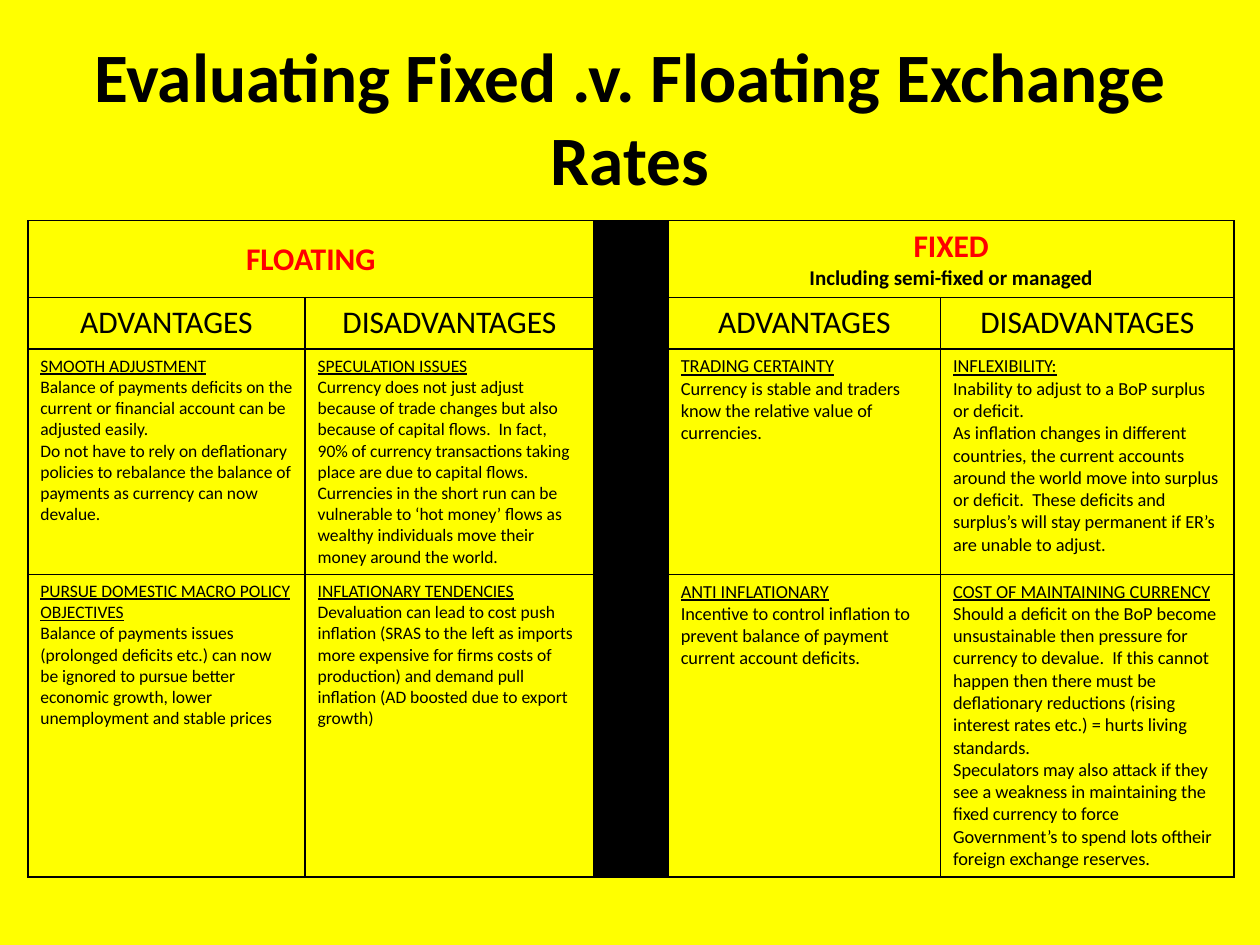
"""Build a slide comparing floating and fixed exchange rates."""
from lxml import etree
from pptx import Presentation
from pptx import util as u
from pptx.dml.color import RGBColor
from pptx.enum import text
from pptx.oxml import ns

TITLE = "Evaluating Fixed .v. Floating Exchange Rates"
YELLOW, BLACK, RED = "FFFF00", "000000", "FF0000"
COLUMNS = [5.59, 5.82, 1.5, 5.49, 5.92]
ROWS = [1.55, 1.04, 4.54, 6.1]
DIVIDER = 2
BODY_SIZES = {0: 10, 1: 10, 3: 10.5, 4: 10.5}
REGIMES = {0: ["FLOATING"], 3: ["FIXED", "Including semi-fixed or managed"]}
SIDES = {0: "ADVANTAGES", 1: "DISADVANTAGES", 3: "ADVANTAGES", 4: "DISADVANTAGES"}
ARGUMENTS = [
    {
        0: ["SMOOTH ADJUSTMENT",
            "Balance of payments deficits on the current or financial account can be "
            "adjusted easily.",
            "Do not have to rely on deflationary policies to rebalance the balance of "
            "payments as currency can now devalue."],
        1: ["SPECULATION ISSUES",
            "Currency does not just adjust because of trade changes but also because of "
            "capital flows.  In fact,  90% of currency transactions taking place are due "
            "to capital flows.  Currencies in the short run can be vulnerable to ‘hot "
            "money’ flows as wealthy individuals move their money around the world."],
        3: ["TRADING CERTAINTY",
            "Currency is stable and traders know the relative value of currencies."],
        4: ["INFLEXIBILITY:",
            "Inability to adjust to a BoP surplus or deficit.",
            "As inflation changes in different countries, the current accounts around the "
            "world move into surplus or deficit.  These deficits and surplus’s will stay "
            "permanent if ER’s are unable to adjust."],
    },
    {
        0: ["PURSUE DOMESTIC MACRO POLICY OBJECTIVES",
            "Balance of payments issues (prolonged deficits etc.) can now be ignored to "
            "pursue better economic growth, lower unemployment and stable prices"],
        1: ["INFLATIONARY TENDENCIES",
            "Devaluation can lead to cost push inflation (SRAS to the left as imports more "
            "expensive for firms costs of production) and demand pull inflation (AD "
            "boosted due to export growth)"],
        3: ["ANTI INFLATIONARY",
            "Incentive to control inflation to prevent balance of payment current account "
            "deficits."],
        4: ["COST OF MAINTAINING CURRENCY",
            "Should a deficit on the BoP become unsustainable then pressure for currency "
            "to devalue.  If this cannot happen then there must be deflationary reductions "
            "(rising interest rates etc.) = hurts living standards.",
            "Speculators may also attack if they see a weakness in maintaining the fixed "
            "currency to force Government’s to spend lots oftheir foreign exchange "
            "reserves."],
    },
]
TITLE_FORMAT = {"size": 39.6, "bold": True}
REGIME_FORMATS = [{"size": 18, "bold": True, "color": RED}, {"size": 12, "bold": True}]
SIDE_FORMAT = {"size": 18, "bold": False}


def rgb(value):
    return RGBColor.from_string(value)


def write(frame, lines, formats, align=text.PP_ALIGN.LEFT):
    for index, (line, values) in enumerate(zip(lines, formats)):
        paragraph = frame.paragraphs[0] if index == 0 else frame.add_paragraph()
        paragraph.alignment = align
        run = paragraph.add_run()
        run.text = line
        font = {"name": "Calibri", **values, "size": u.Pt(values["size"])}
        run.font.color.rgb = rgb(font.pop("color", BLACK))
        for name, value in font.items():
            setattr(run.font, name, value)


def add_borders(cell):
    properties = cell._tc.get_or_add_tcPr()
    for index, side in enumerate(("lnL", "lnR", "lnT", "lnB")):
        line = etree.Element(ns.qn(f"a:{side}"), w=str(u.Pt(1)))
        fill = etree.SubElement(line, ns.qn("a:solidFill"))
        etree.SubElement(fill, ns.qn("a:srgbClr"), val=BLACK)
        properties.insert(index, line)


def add_title(slide):
    box = slide.shapes.add_textbox(u.Cm(1.27), u.Cm(0.76), u.Cm(22.86), u.Cm(3.18))
    frame = box.text_frame
    frame.word_wrap = True
    frame.vertical_anchor = text.MSO_ANCHOR.MIDDLE
    write(frame, [TITLE], [TITLE_FORMAT], text.PP_ALIGN.CENTER)


def add_comparison(slide):
    table = slide.shapes.add_table(
        len(ROWS), len(COLUMNS), u.Cm(0.56), u.Cm(4.45),
        u.Cm(sum(COLUMNS)), u.Cm(sum(ROWS))).table
    table.first_row = table.horz_banding = False
    for column, width in zip(table.columns, COLUMNS):
        column.width = u.Cm(width)
    for row, height in zip(table.rows, ROWS):
        row.height = u.Cm(height)
        for index, cell in enumerate(row.cells):
            if index == DIVIDER:
                cell.fill.solid()
                cell.fill.fore_color.rgb = rgb(BLACK)
            else:
                cell.fill.background()
            add_borders(cell)

    center = text.PP_ALIGN.CENTER
    for column, lines in REGIMES.items():
        cell = table.cell(0, column)
        cell.merge(table.cell(0, column + 1))
        cell.vertical_anchor = text.MSO_ANCHOR.MIDDLE
        write(cell.text_frame, lines, REGIME_FORMATS, center)
    for column, label in SIDES.items():
        write(table.cell(1, column).text_frame, [label], [SIDE_FORMAT], center)
    for row, arguments in enumerate(ARGUMENTS, start=2):
        for column, lines in arguments.items():
            formats = [{"size": BODY_SIZES[column], "bold": False, "underline": index == 0}
                       for index in range(len(lines))]
            write(table.cell(row, column).text_frame, lines, formats)


def main():
    presentation = Presentation()
    presentation.slide_width, presentation.slide_height = u.Cm(25.4), u.Cm(19.05)
    slide = presentation.slides.add_slide(presentation.slide_layouts[6])
    slide.background.fill.solid()
    slide.background.fill.fore_color.rgb = rgb(YELLOW)
    add_title(slide)
    add_comparison(slide)
    presentation.save("out.pptx")


if __name__ == "__main__":
    main()
